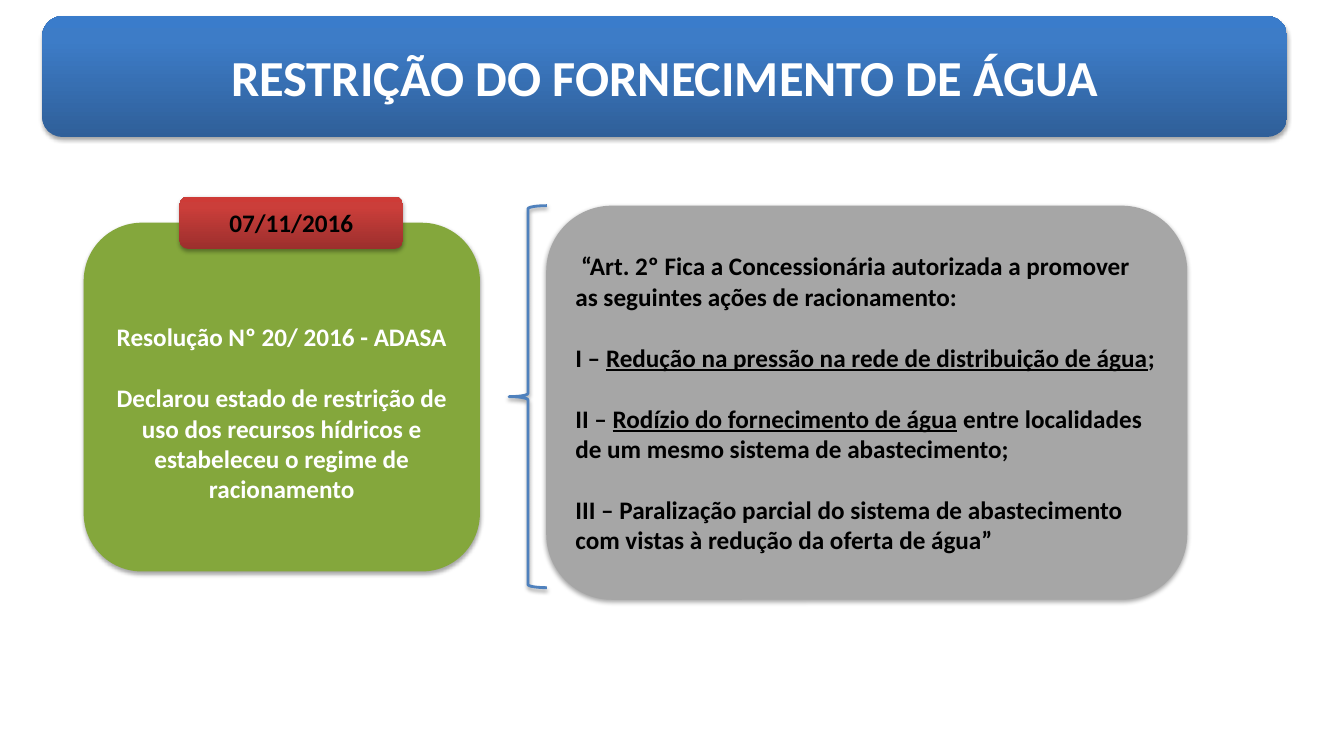
from copy import deepcopy

from lxml import etree
from pptx import Presentation
from pptx import util as u
from pptx.dml.color import RGBColor
from pptx.enum import shapes, text
from pptx.oxml.ns import qn

WHITE = RGBColor(0xFF, 0xFF, 0xFF)
BLACK = RGBColor(0x00, 0x00, 0x00)
GREY = RGBColor(0xA6, 0xA6, 0xA6)
GREEN = RGBColor(0x84, 0xA7, 0x3C)
BRACE_BLUE = RGBColor(0x4F, 0x81, 0xBD)
# Gradient colours run from the bottom edge to the top edge
BLUES = (RGBColor(0x2F, 0x5F, 0x99), RGBColor(0x3D, 0x7C, 0xC7), RGBColor(0x3A, 0x7C, 0xCB))
REDS = (RGBColor(0x9C, 0x2F, 0x2D), RGBColor(0xCB, 0x3E, 0x3A), RGBColor(0xCE, 0x3B, 0x37))
GRADIENT_STOPS = (0, 0.8, 1)

LINE_GAP = 22  # one line of 18-point text
CENTER, LEFT = text.PP_ALIGN.CENTER, text.PP_ALIGN.LEFT


def write_text(box, paragraphs, size=18, color=BLACK, align=CENTER, gap=0, top=3.6):
    """Fill a shape; each paragraph is a list of (text, underlined) spans."""
    frame = box.text_frame
    frame.word_wrap = True
    frame.vertical_anchor = text.MSO_ANCHOR.MIDDLE
    frame.margin_top = u.Pt(top)
    for index, spans in enumerate(paragraphs):
        para = frame.add_paragraph() if index else frame.paragraphs[0]
        para.alignment = align
        para.space_before = u.Pt(gap if index else 0)
        for words, underlined in spans:
            span = para.add_run()
            span.text = words
            font = span.font
            font.name, font.size, font.bold = "Calibri", u.Pt(size), True
            font.color.rgb = color
            font.underline = underlined


class Page:
    """Holds the slide and the shared look of its shapes."""

    def __init__(self, slide):
        self.shapes = slide.shapes

    def shape(self, kind, place, alpha=35, distance=1.8):
        shape = self.shapes.add_shape(kind, *map(u.Pt, place))
        self.shadow(shape, alpha, distance)
        return shape

    def shadow(self, shape, alpha, distance):
        shape.shadow.inherit = False
        effects = shape.element.spPr.find(qn("a:effectLst"))
        outer = etree.SubElement(
            effects, qn("a:outerShdw"), blurRad=str(u.Pt(3.1)),
            dist=str(u.Pt(distance)), dir="5400000", rotWithShape="0")
        color = etree.SubElement(outer, qn("a:srgbClr"), val="000000")
        etree.SubElement(color, qn("a:alpha"), val=str(alpha * 1000))

    def gradient(self, fill, colors):
        fill.gradient()
        fill.gradient_angle = 90
        stops = fill._fill._gradFill.find(qn("a:gsLst"))
        stops.insert(1, deepcopy(stops[0]))
        for stop, position, color in zip(fill.gradient_stops, GRADIENT_STOPS, colors):
            stop.position = position
            stop.color.rgb = color

    def card(self, place, fill, paragraphs, **style):
        box = self.shape(shapes.MSO_SHAPE.ROUNDED_RECTANGLE, place)
        if isinstance(fill, RGBColor):
            box.fill.solid()
            box.fill.fore_color.rgb = fill
        else:
            self.gradient(box.fill, fill)
        box.line.fill.background()
        write_text(box, paragraphs, **style)

    def brace(self, place):
        brace = self.shape(shapes.MSO_SHAPE.LEFT_BRACE, place, alpha=38, distance=1.6)
        brace.fill.background()
        brace.line.color.rgb = BRACE_BLUE
        brace.line.width = u.Pt(2)


def main():
    deck = Presentation()
    deck.slide_width, deck.slide_height = u.Pt(960), u.Pt(540)
    page = Page(deck.slides.add_slide(deck.slide_layouts[6]))

    # Article quoted from the resolution
    page.card((390.2, 146.9, 457.9, 281.5), GREY, [
        [(" “Art. 2º Fica a Concessionária autorizada a promover as seguintes "
          "ações de racionamento:", False)],
        [("I – ", False),
         ("Redução na pressão na rede de distribuição de água", True),
         (";", False)],
        [("II – ", False),
         ("Rodízio do fornecimento de água", True),
         (" entre localidades de um mesmo sistema de abastecimento;", False)],
        [("III – Paralização parcial do sistema de abastecimento com vistas "
          "à redução da oferta de água”", False)],
    ], align=LEFT, gap=LINE_GAP)

    # Title banner
    page.card((30.2, 11.5, 889.2, 86.4), BLUES,
              [[("RESTRIÇÃO DO FORNECIMENTO DE ÁGUA", False)]], size=36, color=WHITE)

    # Brace between resolution and article
    page.brace((363.6, 146.9, 27, 272.9))

    # Resolution, with its date tag on the top edge
    page.card((59.8, 159.1, 283, 249.1), GREEN, [
        [("Resolução Nº 20/ 2016 - ADASA", False)],
        [("Declarou estado de restrição de uso dos recursos hídricos e "
          "estabeleceu o regime de racionamento", False)],
    ], color=WHITE, gap=LINE_GAP, top=3.6 + LINE_GAP)
    page.card((128.2, 140.4, 159.8, 37.4), REDS, [[("07/11/2016", False)]])

    deck.save("out.pptx")


if __name__ == "__main__":
    main()
